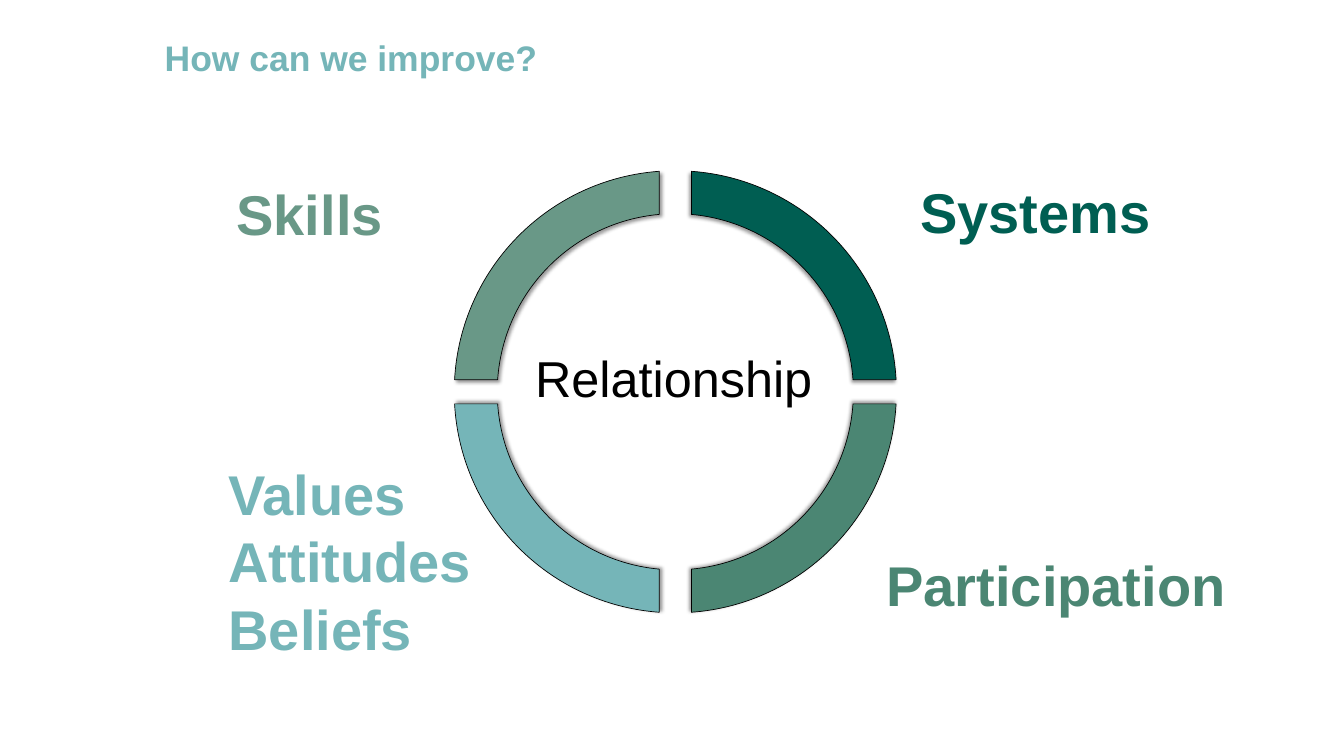
from math import acos, asin, cos, sin, tan

from lxml.etree import Element, SubElement
from pptx import Presentation
from pptx.dml.color import RGBColor
from pptx.enum.text import MSO_ANCHOR as Anchor, MSO_AUTO_SIZE as Fit, PP_ALIGN as Align
from pptx.oxml.ns import qn
from pptx.util import Pt

PX = 9144  # 100 px to the inch
TEAL, PINE, SAGE, FERN, BLACK = "75B5B8", "005E52", "699887", "4B8673", "000000"


def rgb(code):
    return RGBColor.from_string(code)


class Deck:
    font = "Arial"
    mid = (1005, 583)
    outer, inner = 329, 265
    gap = (24, 18)  # half the space between quarters, across and down

    def __init__(self):
        self.prs = Presentation()
        self.prs.slide_width, self.prs.slide_height = 2000 * PX, 1125 * PX
        self.slide = self.prs.slides.add_slide(self.prs.slide_layouts[5])

    def fill(self, frame, lines, size, color, bold, align, space, pad):
        """Write the lines into a text frame; pad is (side, top) in px."""
        side, top = pad
        form = {"word_wrap": True, "auto_size": Fit.NONE, "vertical_anchor": Anchor.TOP,
                "margin_left": side * PX, "margin_right": side * PX,
                "margin_top": top * PX, "margin_bottom": top * PX}
        for key, val in form.items():
            setattr(frame, key, val)
        frame.text = "\n".join(lines)
        style = {"name": self.font, "size": Pt(size), "bold": bold}
        for par in frame.paragraphs:
            par.alignment, par.line_spacing = align, space
            for run in par.runs:
                for key, val in style.items():
                    setattr(run.font, key, val)
                run.font.color.rgb = rgb(color)

    def title(self, text, box):
        shape = self.slide.shapes.title
        for key, val in zip(("left", "top", "width", "height"), box):
            setattr(shape, key, val * PX)
        self.fill(shape.text_frame, [text], 38, TEAL, True, Align.LEFT, 0.9, (0, 0))

    def label(self, lines, box, color, align=Align.LEFT, size=60, bold=True):
        shape = self.slide.shapes.add_textbox(*(n * PX for n in box))
        self.fill(shape.text_frame, lines, size, color, bold, align, 1.0, (20, 10))

    def arc(self, rad, right, down):
        """Start, two handles and end of a Bezier curve along a quarter circle."""
        first, last = asin(self.gap[1] / rad), acos(self.gap[0] / rad)
        pull = 4 / 3 * tan((last - first) / 4)
        spots = [(first, 0), (first, pull), (last, -pull), (last, 0)]
        return [((self.mid[0] + right * rad * (cos(t) - k * sin(t))) * PX,
                 (self.mid[1] + down * rad * (sin(t) + k * cos(t))) * PX) for t, k in spots]

    def bend(self, shape, line, pts):
        """Turn a straight side of an outline into a curve through pts."""
        curve = Element(qn("a:cubicBezTo"))
        for x, y in pts:
            SubElement(curve, qn("a:pt"), x=str(round(x - shape.left)), y=str(round(y - shape.top)))
        line.getparent().replace(line, curve)

    def quarter(self, right, down, color, angle):
        """Draw a ring quarter; right and down are 1 or -1, angle is its shadow's."""
        out = self.arc(self.outer, right, down)
        back = self.arc(self.inner, right, down)[::-1]
        path = self.slide.shapes.build_freeform(*out[0])
        path.add_line_segments([out[3], back[0], back[3]], close=True)
        shape = path.convert_to_shape()
        sides = list(shape._element.iter(qn("a:lnTo")))
        self.bend(shape, sides[0], out[1:])
        self.bend(shape, sides[2], back[1:])
        shape.fill.solid()
        shape.fill.fore_color.rgb = rgb(color)
        shape.line.color.rgb = rgb(BLACK)
        shape.line.width = Pt(0.75)
        self.shade(shape, angle)

    def shade(self, shape, angle):
        shape.shadow.inherit = False
        effects = shape._element.spPr.find(qn("a:effectLst"))
        shadow = SubElement(effects, qn("a:outerShdw"), blurRad=str(Pt(4)), dist=str(Pt(3)),
                            dir=str(angle * 60000), algn="ctr", rotWithShape="0")
        tone = SubElement(shadow, qn("a:srgbClr"), val=BLACK)
        SubElement(tone, qn("a:alpha"), val="40000")


def main():
    deck = Deck()
    deck.title("How can we improve?", (245, 61, 1256, 120))
    for part in ((1, 1, FERN, 225), (1, -1, PINE, 135), (-1, -1, SAGE, 45), (-1, 1, TEAL, 315)):
        deck.quarter(*part)
    deck.label(["Values", "Attitudes", "Beliefs"], (320, 674, 901, 132), TEAL)
    deck.label(["Systems"], (1128, 254, 604, 76), PINE, Align.RIGHT)
    deck.label(["Relationship"], (613, 507, 779, 111), BLACK, Align.CENTER, 54, False)
    deck.label(["Participation"], (1014, 809, 830, 128), FERN, Align.RIGHT)
    deck.label(["Skills"], (332, 257, 441, 74), SAGE)
    deck.prs.save("out.pptx")


if __name__ == "__main__":
    main()
